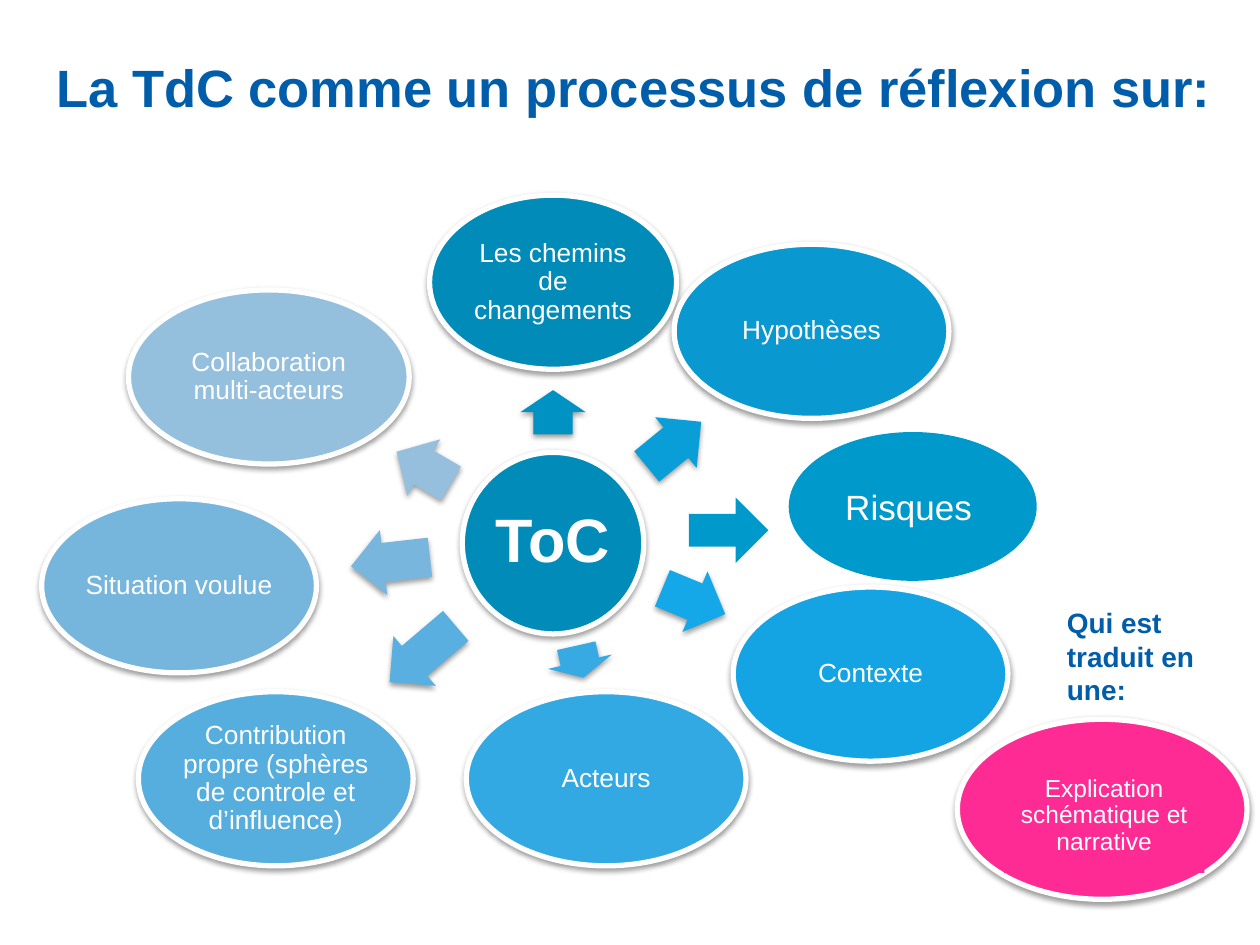
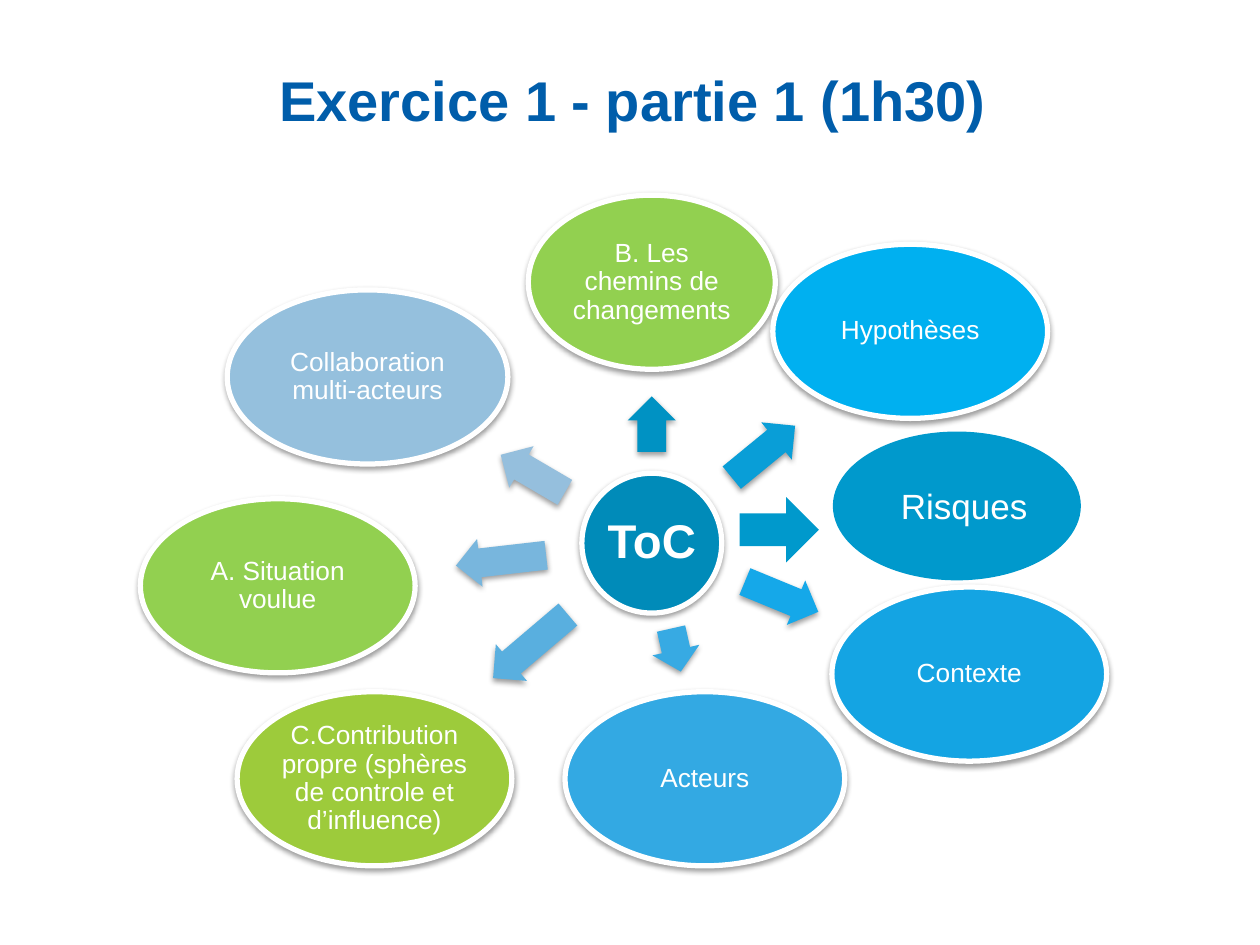
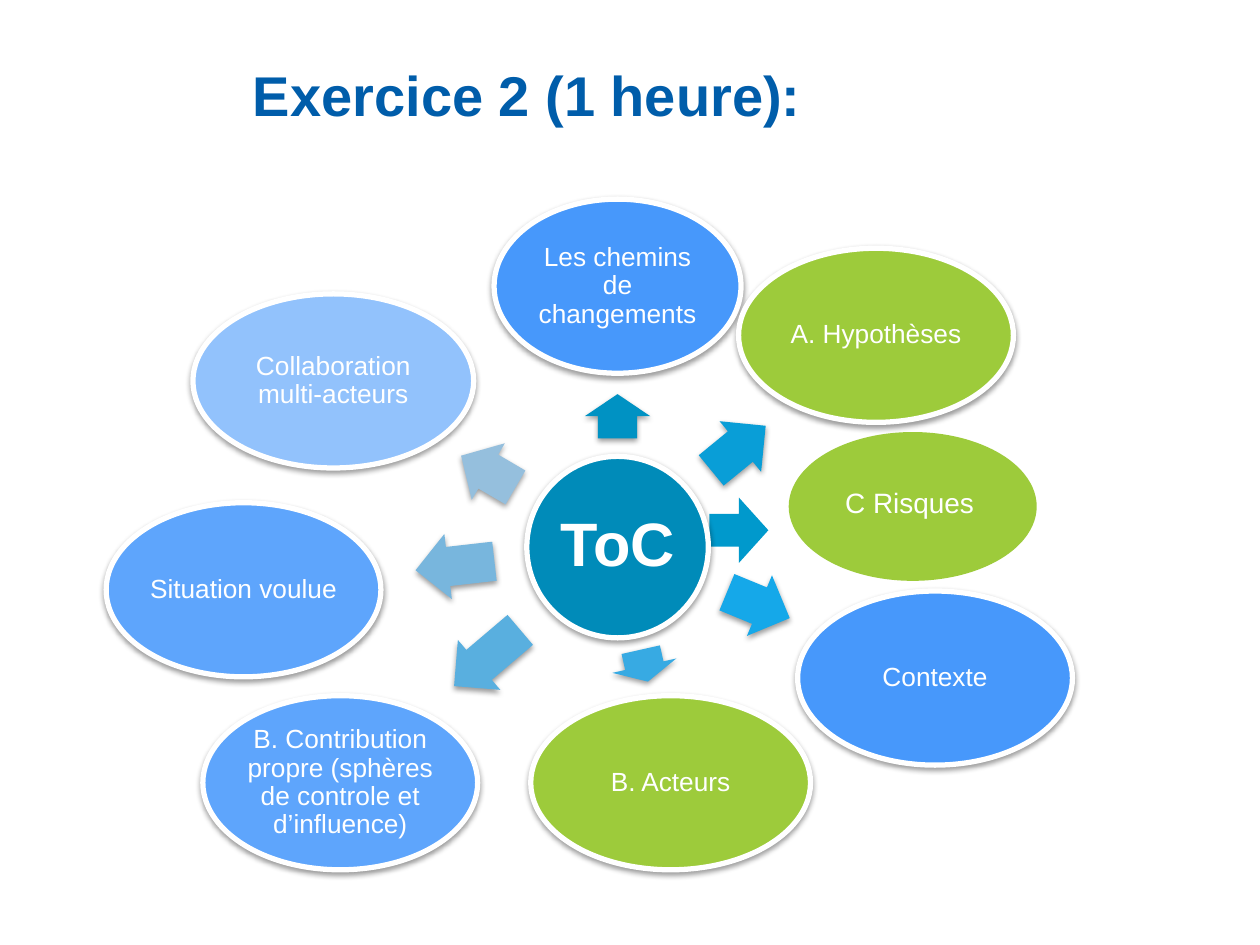
from math import atan2, cos, degrees, radians, sin

from lxml import etree
from pptx import Presentation
from pptx.dml.color import RGBColor
from pptx.enum.shapes import MSO_SHAPE
from pptx.enum.text import MSO_ANCHOR, MSO_AUTO_SIZE, PP_ALIGN
from pptx.oxml.ns import qn
from pptx.util import Cm, Pt

ELLIPSE, ARROW, RECT = MSO_SHAPE.OVAL, MSO_SHAPE.RIGHT_ARROW, MSO_SHAPE.RECTANGLE
LEFT, CENTER = PP_ALIGN.LEFT, PP_ALIGN.CENTER
TOP, MIDDLE, BOTTOM = MSO_ANCHOR.TOP, MSO_ANCHOR.MIDDLE, MSO_ANCHOR.BOTTOM

FONT = "Arial"
WHITE, TITLE_BLUE, HUB_BLUE, RISK_BLUE = "FFFFFF", "005DAA", "008BB9", "0099CC"
GREEN, LIME, PINK = "9DCB3B", "92D050", "FF2B95"
PETAL_HEIGHT = 3.51

# Petal centre from the hub (x, y), petal width, arrow distance, arrow length, arrow colour
PETALS = [
    (0, -5.26, 4.98, 2.64, 0.89, "0092C3"),
    (5.21, -4.27, 5.54, 3.15, 1.42, "099ED7"),
    (6.4, 2.64, 5.54, 3.07, 1.37, "15A8E9"),
    (1.07, 4.75, 5.64, 2.45, 0.66, "37AAE3"),
    (-5.59, 4.75, 5.54, 3.45, 1.75, "59AFDF"),
    (-7.54, 0.86, 5.54, 3.3, 1.6, "78B6DD"),
    (-5.73, -3.35, 5.66, 3.02, 1.27, "95BFDD"),
]
# Hub diameter, hub text size, arrow height, change of arrow distance and length
LARGE_HUB = (3.66, 35, 1.32, 0, 0)
SMALL_HUB = (2.82, 27, 0.97, -0.24, 0.23)


def rgb(color):
    return RGBColor.from_string(color)


def add_shadow(sp):
    effects = sp._element.spPr.find(qn("a:effectLst"))
    shadow = etree.SubElement(effects, qn("a:outerShdw"), blurRad="40000",
                              dist="20000", dir="5400000", rotWithShape="0")
    color = etree.SubElement(shadow, qn("a:srgbClr"), val="000000")
    etree.SubElement(color, qn("a:alpha"), val="38000")


def add_shape(shapes, kind, box, fill, outlined=False, shadow=False):
    sp = shapes.add_shape(kind, *map(Cm, box))
    sp.shadow.inherit = False
    sp.fill.solid()
    sp.fill.fore_color.rgb = rgb(fill)
    if outlined:
        sp.line.color.rgb = rgb(WHITE)
        sp.line.width = Pt(3)
    else:
        sp.line.fill.background()
    if shadow:
        add_shadow(sp)
    return sp


def write(sp, text, size, color=WHITE, bold=False, align=CENTER, anchor=MIDDLE,
          inset=(0.05, 0.05), spacing=0.9):
    tf = sp.text_frame
    tf.word_wrap = True
    tf.auto_size = MSO_AUTO_SIZE.NONE
    tf.vertical_anchor = anchor
    tf.margin_left = tf.margin_right = Cm(inset[0])
    tf.margin_top = tf.margin_bottom = Cm(inset[1])
    p = tf.paragraphs[0]
    p.alignment = align
    p.line_spacing = spacing
    r = p.add_run()
    r.text = text
    r.font.name, r.font.size, r.font.bold = FONT, Pt(size), bold
    r.font.color.rgb = rgb(color)


def write_label(sp, text, size, color=WHITE, bold=False, anchor=TOP):
    """Left-aligned text with the usual text box margins."""
    write(sp, text, size, color, bold, LEFT, anchor, (0.25, 0.13), 1)


def add_titled_slide(prs, text, box, size):
    slide = prs.slides.add_slide(prs.slide_layouts[5])
    title = slide.shapes.title
    title.left, title.top, title.width, title.height = map(Cm, box)
    write_label(title, text, size, TITLE_BLUE, True, BOTTOM)
    return slide


def add_wheel(slide, cx, cy, hub, petals):
    """Hub at (cx, cy) with an arrow towards each (text, colour) petal."""
    diameter, hub_size, arrow_height, shift, stretch = hub
    shapes = slide.shapes.add_group_shape().shapes

    def centred(x, y, w, h):
        return cx + x - w / 2, cy + y - h / 2, w, h

    sp = add_shape(shapes, ELLIPSE, centred(0, 0, diameter, diameter), HUB_BLUE, True, True)
    write(sp, "ToC", hub_size, bold=True)
    for (x, y, width, distance, length, arrow_color), (text, color) in zip(PETALS, petals):
        angle = atan2(y, x)
        reach = distance + shift
        arrow_box = centred(reach * cos(angle), reach * sin(angle),
                            length + stretch, arrow_height)
        arrow = add_shape(shapes, ARROW, arrow_box, arrow_color, shadow=True)
        arrow.adjustments[0] = 0.6
        arrow.rotation = degrees(angle) % 360
        petal = add_shape(shapes, ELLIPSE, centred(x, y, width, PETAL_HEIGHT),
                          color, True, True)
        write(petal, text, 15)


def add_risks(slide, left, top, text, size, color, text_dx, arrow_dx, arrow_width=1.6):
    """Risk ellipse at (left, top), with its label and the arrow pointing to it."""
    add_shape(slide.shapes, ELLIPSE, (left, top, 5, 3), color)
    label = slide.shapes.add_textbox(*map(Cm, (left + text_dx, top + 0.94, 3.4, 1.12)))
    write_label(label, text, size)
    add_shape(slide.shapes, ARROW, (left + arrow_dx, top + 1.32, arrow_width, 1.32), RISK_BLUE)


def add_outcome(slide, left, top):
    """Pink result ellipse with its caption above."""
    shapes = slide.shapes.add_group_shape().shapes
    add_shape(shapes, ELLIPSE, (left, top, 5.84, 3.63), PINK, True, True)
    panel = add_shape(shapes, RECT, (left + 0.94, top + 0.79, 4.04, 2.31), PINK)
    write(panel, "Explication schématique et narrative", 14)
    caption = slide.shapes.add_textbox(*map(Cm, (left + 1.96, top - 2.59, 3.63, 2.46)))
    write_label(caption, "Qui est traduit en une:", 16, TITLE_BLUE, True, BOTTOM)


def build_reflection(prs):
    slide = add_titled_slide(prs, "La TdC comme un processus de réflexion sur:",
                             (0.89, 0.91, 24, 1.6), 30)
    add_wheel(slide, 11.15, 10.95, LARGE_HUB, [
        ("Les chemins de changements", HUB_BLUE),
        ("Hypothèses", "0998CF"),
        ("Contexte", "14A4E3"),
        ("Acteurs", "33A9E3"),
        ("Contribution propre (sphères de controle et d’influence)", "56AEDE"),
        ("Situation voulue", "77B6DC"),
        ("Collaboration multi-acteurs", "95C0DD"),
    ])
    add_risks(slide, 15.9, 8.71, "Risques", 20, RISK_BLUE, 0.89, -2.01)
    add_outcome(slide, 19.3, 14.5)


def build_exercise_1(prs):
    slide = add_titled_slide(prs, "Exercice 1 - partie 1 (1h30)", (5.38, 0.91, 19.05, 1.9), 32)
    add_wheel(slide, 13.14, 10.95, SMALL_HUB, [
        ("B. Les chemins de changements", LIME),
        ("Hypothèses", "00B0F0"),
        ("Contexte", "14A4E3"),
        ("Acteurs", "33A9E3"),
        ("C.Contribution propre (sphères de controle et d’influence)", GREEN),
        ("A. Situation voulue", LIME),
        ("Collaboration multi-acteurs", "95C0DD"),
    ])
    add_risks(slide, 16.79, 8.7, "Risques", 20, RISK_BLUE, 1.12, -1.88)


def build_exercise_2(prs):
    slide = add_titled_slide(prs, "Exercice 2 (1 heure):", (4.85, 0.81, 19.05, 1.9), 32)
    add_risks(slide, 15.9, 8.71, "C Risques", 16, GREEN, 0.89, -1.6, 1.19)
    add_wheel(slide, 12.45, 11.03, LARGE_HUB, [
        ("Les chemins de changements", "4798FB"),
        ("A. Hypothèses", GREEN),
        ("Contexte", "4798FB"),
        ("B. Acteurs", GREEN),
        ("B. Contribution propre (sphères de controle et d’influence)", "5EA5FC"),
        ("Situation voulue", "5EA5FC"),
        ("Collaboration multi-acteurs", "92C2FC"),
    ])


def main():
    prs = Presentation()
    prs.slide_width, prs.slide_height = Cm(25.4), Cm(19.05)
    for build in (build_reflection, build_exercise_1, build_exercise_2):
        build(prs)
    prs.save("out.pptx")


if __name__ == "__main__":
    main()
